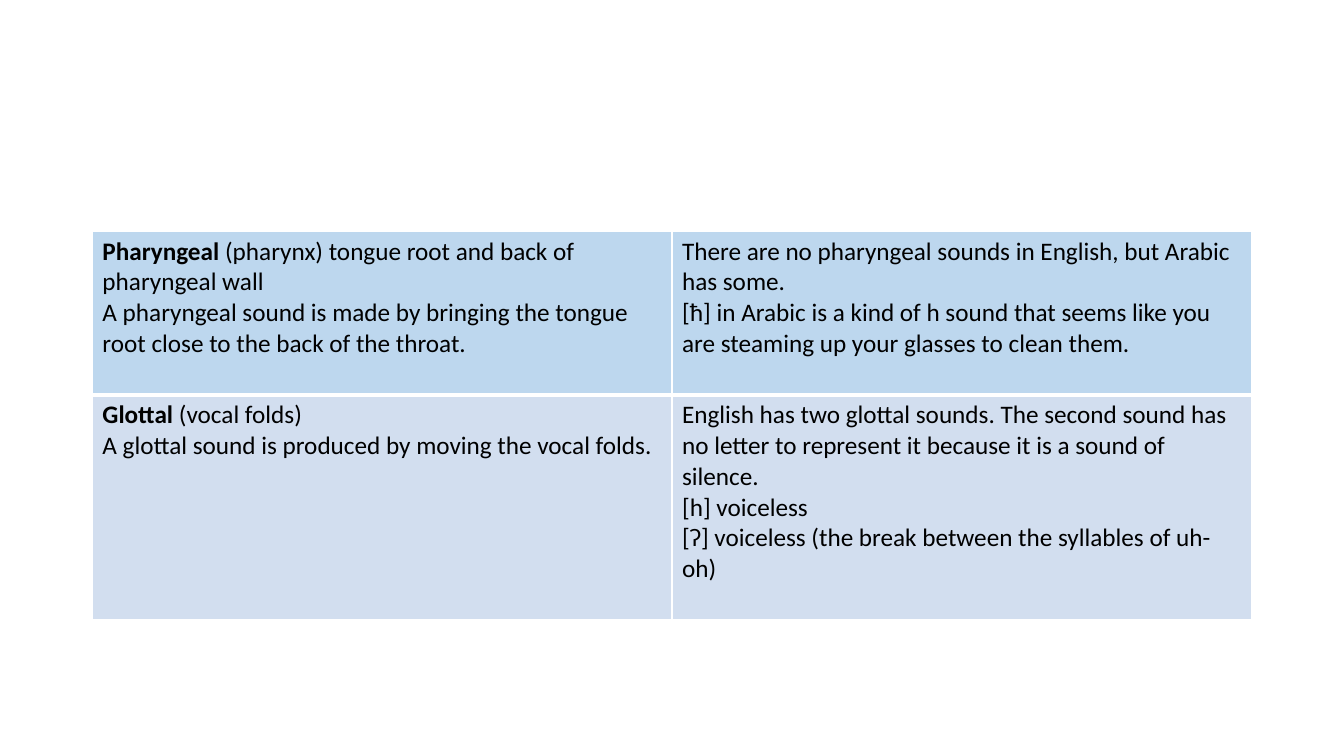
import dataclasses
import itertools

import lxml.etree
import pptx
import pptx.dml.color
import pptx.oxml.ns
import pptx.slide
import pptx.table
import pptx.text.text
import pptx.util

GRID_COLUMNS = 320
GRID_ROWS = 180


@dataclasses.dataclass(frozen=True)
class Theme:
    font: str = "Calibri"
    text_size: float = 18
    text: str = "000000"
    border: str = "FFFFFF"
    thin_border: float = 1
    thick_border: float = 3


@dataclasses.dataclass(frozen=True)
class Span:
    text: str
    bold: bool = False


@dataclasses.dataclass(frozen=True)
class SoundRow:
    height: float
    fill: str
    bottom_border: float
    place: list[list[Span]]
    sounds: list[list[Span]]


THEME = Theme()

SOUND_ROWS = [
    SoundRow(
        39, "BDD7EE", THEME.thick_border,
        [
            [Span("Pharyngeal", True),
             Span(" (pharynx) tongue root and back of pharyngeal wall")],
            [Span("A pharyngeal sound is made by bringing the tongue root "
                  "close to the back of the throat.")],
        ],
        [
            [Span("There are no pharyngeal sounds in English, but Arabic has some.")],
            [Span("[ħ] in Arabic is a kind of h sound that seems like you are "
                  "steaming up your glasses to clean them.")],
        ],
    ),
    SoundRow(
        53.5, "D2DEEF", THEME.thin_border,
        [
            [Span("Glottal", True), Span(" (vocal folds)")],
            [Span("A glottal sound is produced by moving the vocal folds.")],
        ],
        [
            [Span("English has two glottal sounds. The second sound has no letter "
                  "to represent it because it is a sound of silence.")],
            [Span("[h] voiceless")],
            [Span("[ʔ] voiceless (the break between the syllables of uh-oh)")],
        ],
    ),
]


def color(value: str) -> pptx.dml.color.RGBColor:
    return pptx.dml.color.RGBColor.from_string(value)


def add_border(cell: pptx.table._Cell, side: str, width: float) -> None:
    qualified = pptx.oxml.ns.qn
    properties = cell._tc.get_or_add_tcPr()
    line = lxml.etree.SubElement(
        properties, qualified(f"a:ln{side}"), w=str(pptx.util.Pt(width)))
    fill = lxml.etree.SubElement(line, qualified("a:solidFill"))
    lxml.etree.SubElement(fill, qualified("a:srgbClr"), val=THEME.border)


def write_paragraph(para: pptx.text.text._Paragraph, spans: list[Span]) -> None:
    para.font.name = THEME.font
    para.font.size = pptx.util.Pt(THEME.text_size)
    para.font.color.rgb = color(THEME.text)
    for span in spans:
        run = para.add_run()
        run.text = span.text
        run.font.bold = span.bold


def fill_cell(cell: pptx.table._Cell, row: SoundRow, top_border: float,
              paragraphs: list[list[Span]]) -> None:
    thin = THEME.thin_border
    borders = {"L": thin, "R": thin, "T": top_border, "B": row.bottom_border}
    for side, width in borders.items():
        add_border(cell, side, width)
    cell.fill.solid()
    cell.fill.fore_color.rgb = color(row.fill)
    frame = cell.text_frame
    for index, spans in enumerate(paragraphs):
        para = frame.add_paragraph() if index else frame.paragraphs[0]
        write_paragraph(para, spans)


def add_sound_table(page: pptx.slide.Slide, column: float, row: float) -> None:
    left, top = int(22 * column), int(55 * row)
    width = int(276 * column)
    height = int(sum(sound.height for sound in SOUND_ROWS) * row)
    table = page.shapes.add_table(len(SOUND_ROWS), 2, left, top, width, height).table
    table.first_row = False
    table.horz_banding = False
    top_borders = itertools.chain(
        [THEME.thin_border], (sound.bottom_border for sound in SOUND_ROWS))
    for index, (sound, top_border) in enumerate(zip(SOUND_ROWS, top_borders)):
        table.rows[index].height = int(sound.height * row)
        for position, paragraphs in enumerate((sound.place, sound.sounds)):
            fill_cell(table.cell(index, position), sound, top_border, paragraphs)


def main() -> None:
    deck = pptx.Presentation()
    deck.slide_width = pptx.util.Inches(13.33)
    deck.slide_height = pptx.util.Inches(7.5)
    page = deck.slides.add_slide(deck.slide_layouts.get_by_name("Blank"))
    add_sound_table(page, deck.slide_width / GRID_COLUMNS, deck.slide_height / GRID_ROWS)
    deck.save("out.pptx")


if __name__ == "__main__":
    main()
